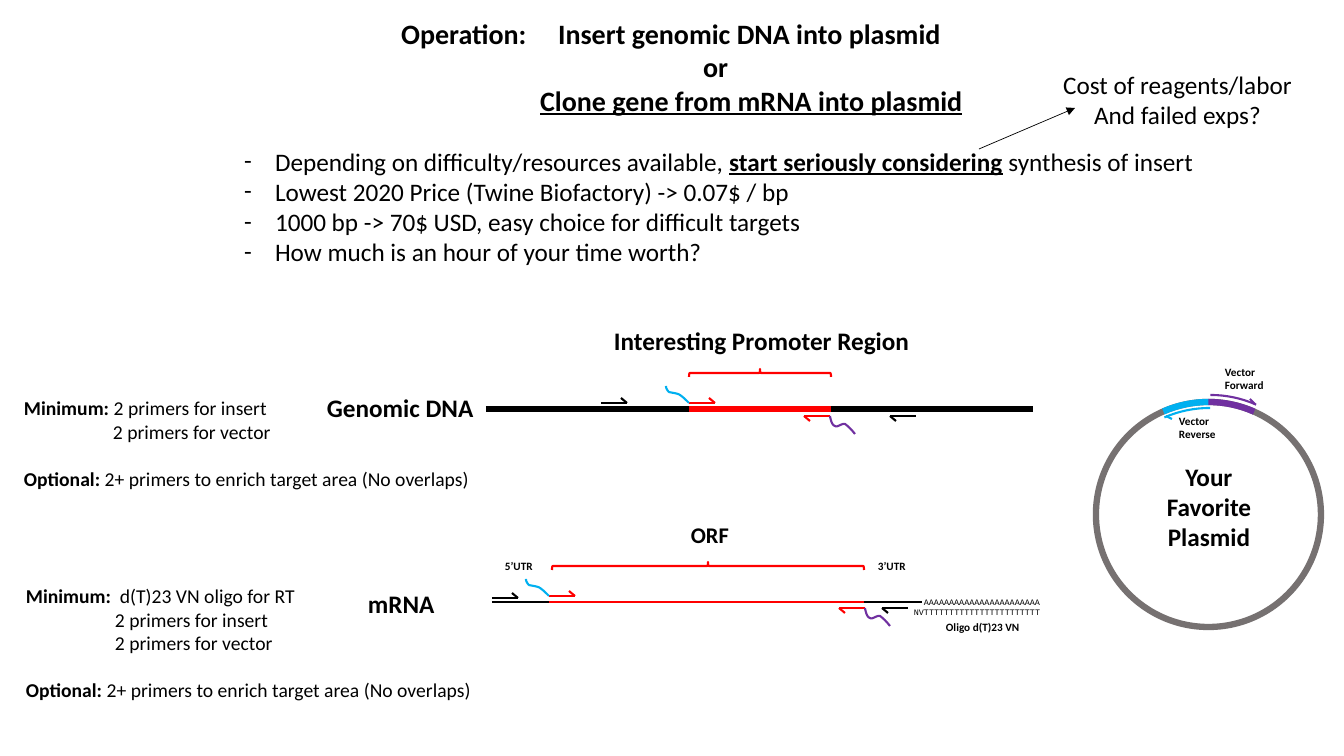
"""Build a slide comparing primer needs for cloning genomic DNA and mRNA into a plasmid."""
from pptx import Presentation
from pptx.dml.color import RGBColor
from pptx.enum.shapes import MSO_CONNECTOR, MSO_SHAPE
from pptx.enum.text import MSO_ANCHOR, MSO_AUTO_SIZE, PP_ALIGN
from pptx.oxml.ns import qn
from pptx.util import Pt
from lxml import etree

EMU_PER_PX = 914400 / 100.8
STRAIGHT = MSO_CONNECTOR.STRAIGHT
ELLIPSE, ARC, BRACE = MSO_SHAPE.OVAL, MSO_SHAPE.ARC, MSO_SHAPE.LEFT_BRACE
TOP = MSO_ANCHOR.TOP
FIT_SHAPE, FIT_NONE = MSO_AUTO_SIZE.SHAPE_TO_FIT_TEXT, MSO_AUTO_SIZE.NONE
LEFT, CENTER = PP_ALIGN.LEFT, PP_ALIGN.CENTER

BLACK, WHITE, GRAY = "000000", "FFFFFF", "767171"
RED, CYAN, PURPLE = "FF0000", "00B0F0", "7030A0"

FORWARD_TAIL = [(0, 0), (-3, -3), (-6, -6), (-9, -8), (-12, -10), (-17, -10),
                (-20, -11), (-22, -13), (-23, -15), (-23, -17)]
REVERSE_TAIL = [(0, 0), (1, 5), (2, 9), (5, 10), (7, 12), (12, 7),
                (15, 8), (18, 10), (22, 14), (25, 18)]


def px(length):
    return round(length * EMU_PER_PX)


def rgb(color):
    return RGBColor.from_string(color)


def write(frame, text, size=18, bold=False, underline=False, font="Calibri",
          color=BLACK, align=LEFT, margin=0, hanging=0, bullet=None,
          before=0, same_line=False):
    paragraph = frame.paragraphs[-1]
    if not same_line:
        if paragraph.runs:
            paragraph = frame.add_paragraph()
        paragraph.alignment = align
        paragraph.space_before = Pt(before)
        properties = paragraph._p.get_or_add_pPr()
        properties.set("marL", str(px(margin)))
        properties.set("indent", str(-px(hanging)))
        if bullet:
            etree.SubElement(properties, qn("a:buFont"), typeface=font)
            etree.SubElement(properties, qn("a:buChar"), char=bullet)
        else:
            etree.SubElement(properties, qn("a:buNone"))
    run = paragraph.add_run()
    run.text = text
    run.font.size, run.font.name = Pt(size), font
    run.font.bold, run.font.underline = bold, underline
    run.font.color.rgb = rgb(color)


def bezier(start, control1, control2, end, steps=8):
    for step in range(1, steps + 1):
        t = step / steps
        yield tuple((1 - t) ** 3 * a + 3 * (1 - t) ** 2 * t * b
                    + 3 * (1 - t) * t ** 2 * c + t ** 3 * d
                    for a, b, c, d in zip(start, control1, control2, end))


class Canvas:
    def __init__(self, slide, thin=1.5, thick=4.5):
        self.slide, self.thin, self.thick = slide, thin, thick

    def placeholder(self, index, left, top, width, height):
        shape = self.slide.placeholders[index]
        shape.left, shape.top = px(left), px(top)
        shape.width, shape.height = px(width), px(height)
        frame = shape.text_frame
        frame.vertical_anchor, frame.auto_size, frame.word_wrap = TOP, FIT_NONE, True
        return frame

    def text_box(self, left, top, width, height):
        frame = self.slide.shapes.add_textbox(px(left), px(top), px(width), px(height)).text_frame
        frame.word_wrap, frame.auto_size = False, FIT_SHAPE
        return frame

    def line(self, start, end, color=BLACK, width=None, arrow=False):
        connector = self.slide.shapes.add_connector(STRAIGHT, *map(px, start + end))
        connector.line.color.rgb = rgb(color)
        connector.line.width = Pt(width or self.thin)
        properties = connector.element.spPr
        if arrow:
            etree.SubElement(properties.find(qn("a:ln")), qn("a:tailEnd"), type="triangle")
        etree.SubElement(properties, qn("a:effectLst"))

    def outline(self, shape, color, width, fill=None):
        shape.shadow.inherit = False
        if fill:
            shape.fill.solid()
            shape.fill.fore_color.rgb = rgb(fill)
        else:
            shape.fill.background()
        shape.line.color.rgb = rgb(color)
        shape.line.width = Pt(width)

    def circle(self, left, top, size, color, fill):
        shape = self.slide.shapes.add_shape(ELLIPSE, px(left), px(top), px(size), px(size))
        self.outline(shape, color, self.thick, fill)

    def arc(self, left, top, size, color, width, rotation=0):
        shape = self.slide.shapes.add_shape(ARC, px(left), px(top), px(size), px(size))
        shape.adjustments[0], shape.adjustments[1] = 162, 176.38
        shape.rotation = rotation
        self.outline(shape, color, width)

    def brace(self, left, right, top, thickness=8):
        length = right - left
        shape = self.slide.shapes.add_shape(
            BRACE, px((left + right - thickness) / 2), px(top + (thickness - length) / 2),
            px(thickness), px(length))
        shape.rotation = 90
        self.outline(shape, RED, self.thin)

    def curve(self, left, top, offsets, color):
        nodes = [(left + x, top + y) for x, y in offsets]
        points = [point for i in range(0, len(nodes) - 1, 3) for point in bezier(*nodes[i:i + 4])]
        builder = self.slide.shapes.build_freeform(px(left), px(top), scale=1.0)
        builder.add_line_segments([(px(x), px(y)) for x, y in points], close=False)
        self.outline(builder.convert_to_shape(), color, self.thin)

    def primer(self, start, y, direction, color=BLACK):
        tip = start + 26 * direction
        self.line((start, y), (tip, y), color)
        self.line((tip - 6 * direction, y - 5 * direction), (tip, y), color)

    def insert_primers(self, forward, reverse):
        self.primer(*forward, 1, RED)
        self.curve(*forward, FORWARD_TAIL, CYAN)
        self.primer(*reverse, -1, RED)
        self.curve(*reverse, REVERSE_TAIL, PURPLE)

    def strand(self, y, stops, width):
        for start, end, color in zip(stops, stops[1:], (BLACK, RED, BLACK)):
            self.line((start, y), (end, y), color, width)


def add_heading(canvas):
    title = canvas.placeholder(0, 391, 11, 604, 112)
    write(title, "Operation:\tInsert genomic DNA into plasmid", size=20, bold=True,
          margin=157, hanging=157)
    write(title, "or", size=20, bold=True, margin=302)
    write(title, "Clone gene from mRNA into plasmid", size=20, bold=True, underline=True, margin=139)

    body = canvas.placeholder(1, 234, 141, 1008, 163)
    item = {"margin": 31, "hanging": 31, "bullet": "-"}
    write(body, "Depending on difficulty/resources available, ", **item)
    write(body, "start seriously considering", bold=True, underline=True, same_line=True)
    write(body, " synthesis of insert", same_line=True)
    for text in ("Lowest 2020 Price (Twine Biofactory) -> 0.07$ / bp",
                 "1000 bp -> 70$ USD, easy choice for difficult targets",
                 "How much is an hour of your time worth?"):
        write(body, text, **item)

    cost = canvas.text_box(1052, 64, 251, 72)
    for text in ("Cost of reagents/labor", "And failed exps?"):
        write(cost, text, align=CENTER)
    canvas.line((979, 149), (1075, 108), width=0.5, arrow=True)


def add_requirements(canvas, left, top, height, first, others, gap=" ", hanging=0):
    frame = canvas.text_box(left, top, 470, height)
    write(frame, "Minimum:" + gap, size=14, bold=True, margin=hanging, hanging=hanging)
    write(frame, first, size=14, same_line=True)
    for text in others:
        write(frame, text, size=14, margin=89)
    write(frame, "Optional: ", size=14, bold=True, before=17)
    write(frame, "2+ primers to enrich target area (No overlaps)", size=14, same_line=True)


def add_strands(canvas):
    canvas.strand(409, (486, 689, 831, 1033), canvas.thick)
    canvas.brace(689, 831, 369)
    canvas.insert_primers((689, 403), (830, 416))
    canvas.strand(602, (492, 549, 864, 922), canvas.thin)
    canvas.brace(552, 864, 562)
    canvas.insert_primers((549, 596), (865, 608))
    for start, y, direction in ((601, 403, 1), (916, 416, -1), (492, 598, 1), (908, 608, -1)):
        canvas.primer(start, y, direction)


def add_plasmid(canvas):
    canvas.circle(1096, 402, 225, GRAY, WHITE)
    for left, top, color, width, rotation in (
            (1096, 402, CYAN, canvas.thick, 336.4), (1096, 402, PURPLE, canvas.thick, 0),
            (1097, 408, CYAN, canvas.thin, 336.4), (1098, 395, PURPLE, canvas.thin, 0)):
        canvas.arc(left, top, 225, color, width, rotation)
    canvas.line((1250, 399), (1255, 404), PURPLE)
    canvas.line((1166, 416), (1172, 419), CYAN)
    name = canvas.text_box(1156, 456, 106, 102)
    for text in ("Your", "Favorite", "Plasmid"):
        write(name, text, bold=True, align=CENTER)
    for left, top, direction in ((1215, 360, "Forward"), (1169, 409, "Reverse")):
        label = canvas.text_box(left, top, 70, 37)
        for text in ("Vector", direction):
            write(label, text, size=8, bold=True)


def add_labels(canvas):
    for text, left, top, width, height, size in (
            ("Interesting Promoter Region", 604, 320, 318, 40, 18),
            ("Genomic DNA", 317, 387, 168, 40, 18), ("mRNA", 358, 583, 88, 40, 18),
            ("ORF", 681, 516, 58, 37, 16), ("5’UTR", 495, 554, 48, 24, 8),
            ("3’UTR", 868, 554, 48, 24, 8), ("Oligo d(T)23 VN", 936, 615, 94, 24, 8)):
        write(canvas.text_box(left, top, width, height), text, size=size, bold=True)
    for text, left, top, width in (("A" * 23, 914, 592, 138), ("NV" + "T" * 23, 904, 602, 148)):
        write(canvas.text_box(left, top, width, 20), text, size=6, font="Courier New")


def main():
    presentation = Presentation()
    presentation.slide_width, presentation.slide_height = px(1344), px(756)
    canvas = Canvas(presentation.slides.add_slide(presentation.slide_layouts[1]))
    add_heading(canvas)
    add_requirements(canvas, 14, 391, 105, "2 primers for insert", ["2 primers for vector"])
    add_requirements(canvas, 16, 579, 152, "d(T)23 VN oligo for RT",
                     ["2 primers for insert", "2 primers for vector"], gap="\t", hanging=94)
    add_strands(canvas)
    add_plasmid(canvas)
    add_labels(canvas)
    presentation.save("out.pptx")


if __name__ == "__main__":
    main()
